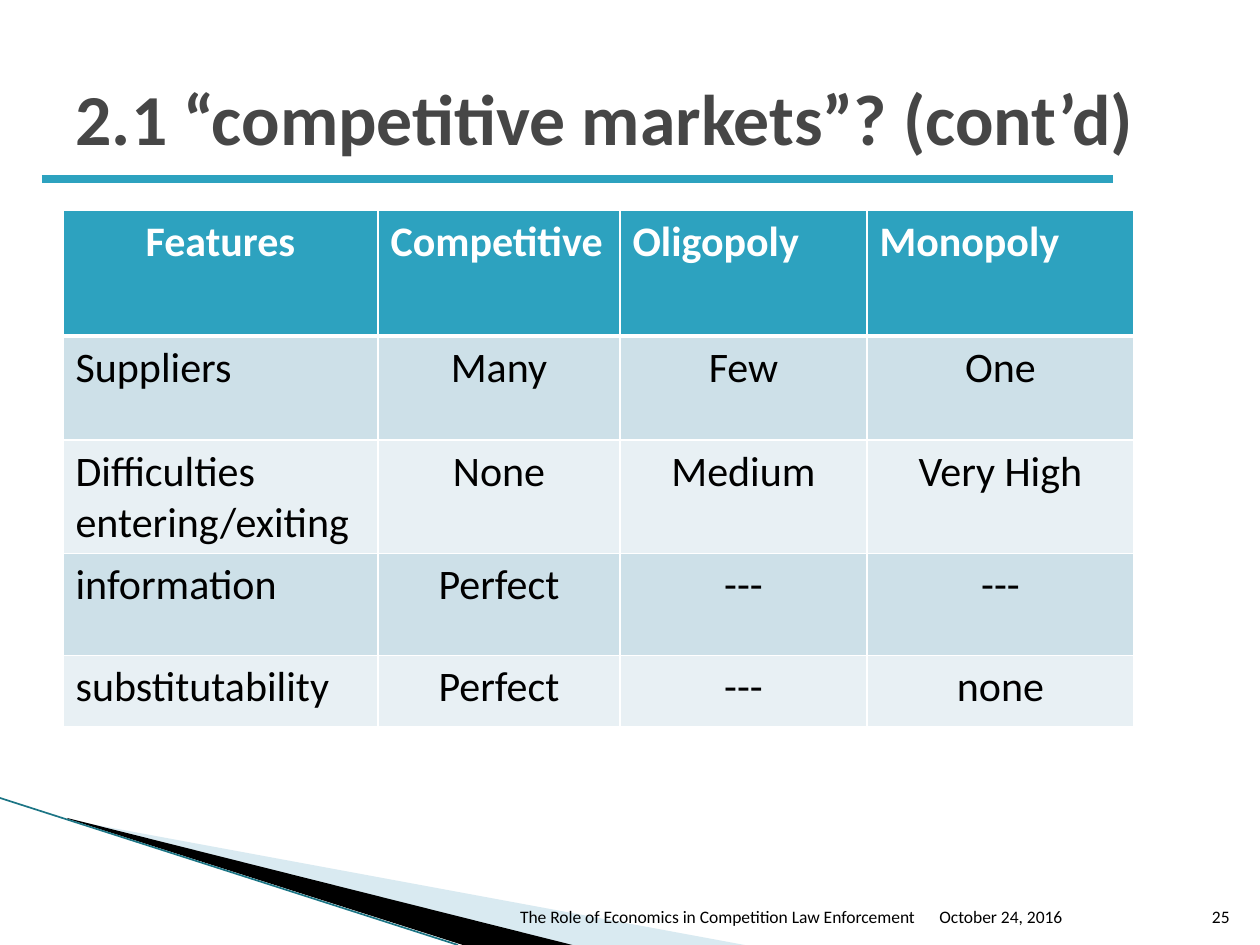
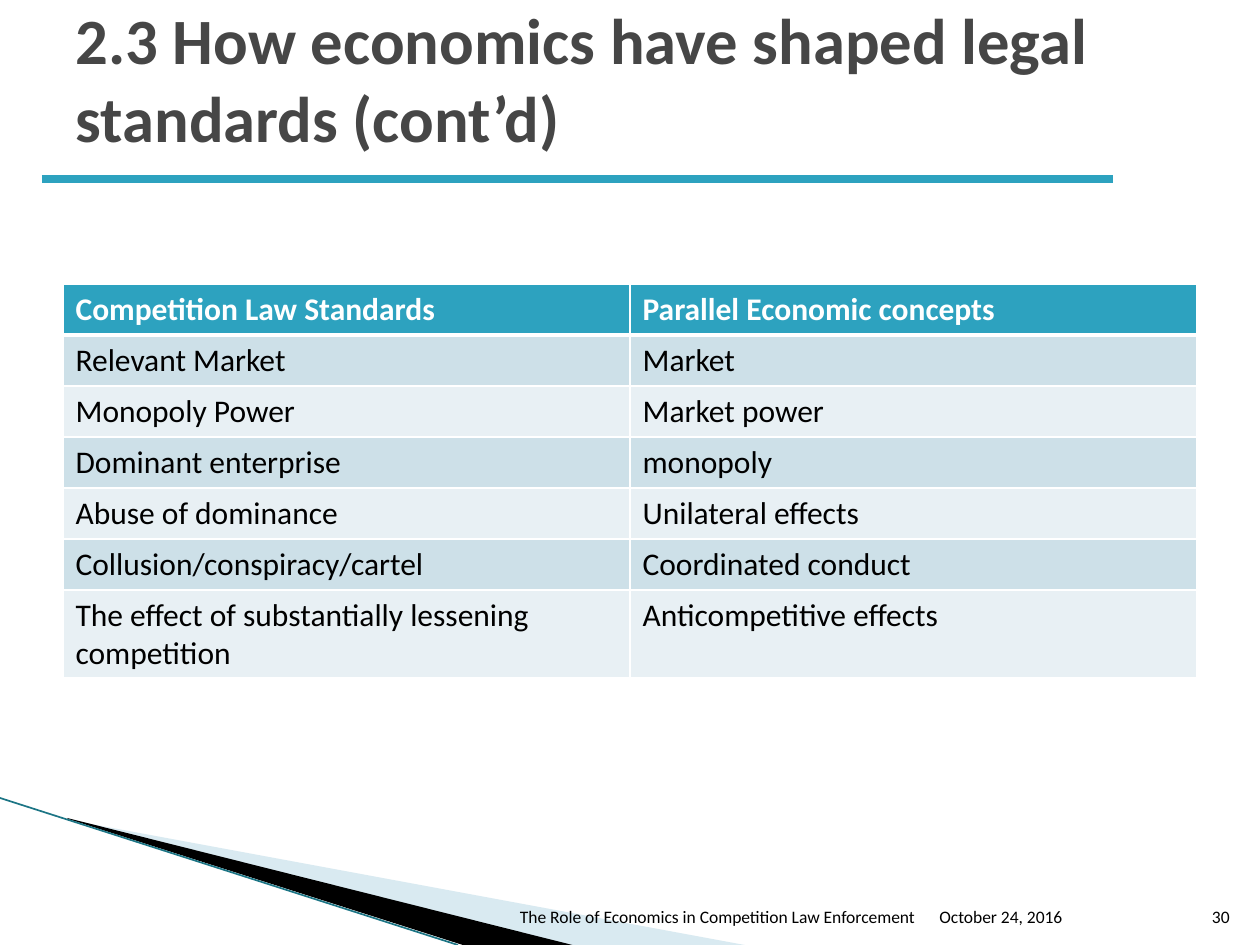
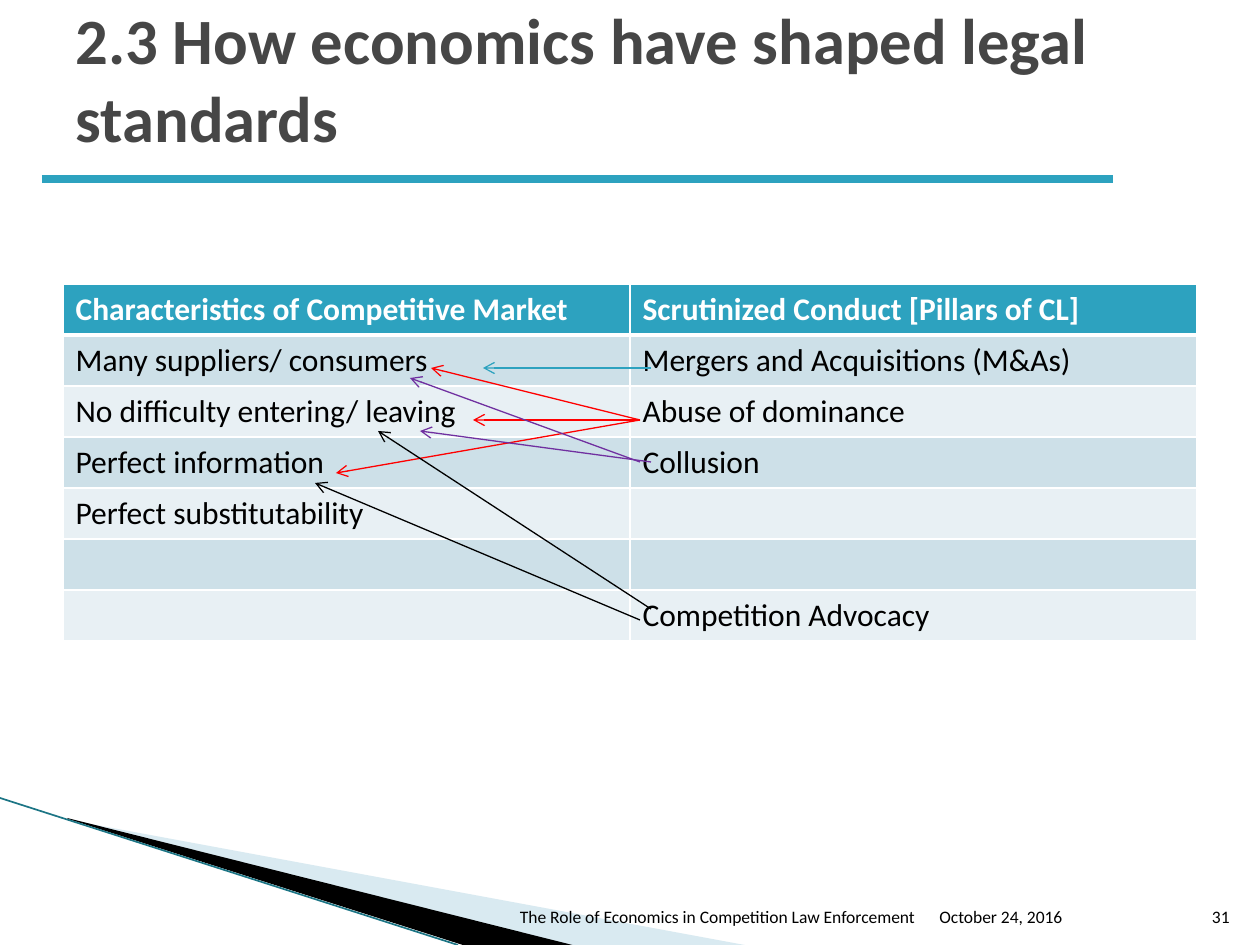
from lxml import etree
from pptx import Presentation
from pptx.dml.color import RGBColor
from pptx.enum.shapes import MSO_CONNECTOR
from pptx.enum.text import MSO_ANCHOR, MSO_AUTO_SIZE, PP_ALIGN
from pptx.oxml.ns import qn
from pptx.util import Pt

# Lengths are whole px, 126 to the inch
PX = 914400 / 126
SLIDE_W, SLIDE_H = 1260, 945

STRAIGHT = MSO_CONNECTOR.STRAIGHT
LEFT, CENTER, RIGHT = PP_ALIGN.LEFT, PP_ALIGN.CENTER, PP_ALIGN.RIGHT
MIDDLE, BOTTOM = MSO_ANCHOR.MIDDLE, MSO_ANCHOR.BOTTOM
NO_AUTOFIT = MSO_AUTO_SIZE.NONE

FONT = "Calibri"
WHITE = RGBColor(0xFF, 0xFF, 0xFF)
BLACK = RGBColor(0x00, 0x00, 0x00)
TITLE_GREY = RGBColor(0x46, 0x46, 0x46)
TEAL = RGBColor(0x2D, 0xA2, 0xBF)
DARK_TEAL = RGBColor(0x1C, 0x75, 0x85)
PALE_BLUE = RGBColor(0xA0, 0xCB, 0xDC)
BAND_DARK = RGBColor(0xCD, 0xE0, 0xE8)
BAND_LIGHT = RGBColor(0xE8, 0xF0, 0xF4)
RED = RGBColor(0xFF, 0x00, 0x00)
PURPLE = RGBColor(0x70, 0x30, 0xA0)

TITLE_BOX = (63, 38, 1134, 157)
FOOTER_TOP, FOOTER_H = 883, 50
LECTURE = "The Role of Economics in Competition Law Enforcement"
LECTURE_DATE = "October 24, 2016"

MARKET_TABLE_BOX = (63, 210)
MARKET_COLUMNS = [315, 242, 247, 267]
MARKET_ROWS = [126, 104, 93, 102, 71]
MARKET_FEATURES = [
    ["Features", "Competitive", "Oligopoly", "Monopoly"],
    ["Suppliers", "Many", "Few", "One"],
    ["Difficulties entering/exiting", "None", "Medium", "Very High"],
    ["information", "Perfect", "---", "---"],
    ["substitutability", "Perfect", "---", "none"],
]

PAIR_TABLE_BOX = (63, 284)
PAIR_COLUMNS = [567, 567]
PAIR_ROW_H = 51
LEGAL_STANDARDS = [
    ["Competition Law Standards", "Parallel Economic concepts"],
    ["Relevant Market", "Market"],
    ["Monopoly Power", "Market power"],
    ["Dominant enterprise", "monopoly"],
    ["Abuse of dominance", "Unilateral effects"],
    ["Collusion/conspiracy/cartel", "Coordinated conduct"],
    ["The effect of substantially lessening competition", "Anticompetitive effects"],
]
SCRUTINIZED_CONDUCT = [
    ["Characteristics of Competitive Market", "Scrutinized Conduct [Pillars of CL]"],
    ["Many suppliers/ consumers", "Mergers and Acquisitions (M&As)"],
    ["No difficulty entering/ leaving", "Abuse of dominance"],
    ["Perfect information", "Collusion"],
    ["Perfect substitutability", ""],
    ["", ""],
    ["", "Competition Advocacy"],
]
# Conduct point, market characteristic point (from the table corner), colour
CONDUCT_ARROWS = [
    ((588, 84), (420, 84), TEAL),
    ((577, 136), (410, 136), RED),
    ((577, 136), (273, 189), RED),
    ((577, 136), (368, 84), RED),
    ((577, 178), (347, 94), PURPLE),
    ((588, 178), (357, 147), PURPLE),
    ((577, 336), (252, 199), BLACK),
    ((588, 325), (315, 147), BLACK),
]


def px(length):
    return round(length * PX)


def write_text(frame, text, size=10, color=BLACK, bold=False, align=LEFT):
    paragraph = frame.paragraphs[0]
    paragraph.alignment = align
    if text:
        run = paragraph.add_run()
        run.text = text
        run.font.name = FONT
        run.font.size = Pt(size)
        run.font.bold = bold
        run.font.color.rgb = color


def add_line(slide, start, end, color, width, arrow=False):
    line = slide.shapes.add_connector(STRAIGHT, *map(px, start + end))
    line.line.color.rgb = color
    line.line.width = Pt(width)
    if arrow:
        etree.SubElement(line.line._get_or_add_ln(), qn("a:tailEnd"), type="arrow")
    etree.SubElement(line._element.spPr, qn("a:effectLst"))


def add_wedge(slide, points, color, opacity=100):
    outline = slide.shapes.build_freeform(*points[0], scale=PX)
    outline.add_line_segments(points[1:], close=True)
    wedge = outline.convert_to_shape()
    wedge.shadow.inherit = False
    wedge.line.fill.background()
    wedge.fill.solid()
    wedge.fill.fore_color.rgb = color
    if opacity < 100:
        fill_color = wedge._element.spPr.find(".//" + qn("a:srgbClr"))
        etree.SubElement(fill_color, qn("a:alpha"), val=str(opacity * 1000))


def add_corner_sweep(slide):
    add_wedge(slide, [(69, 820), (750, 946), (575, 946), (69, 819)], PALE_BLUE, opacity=40)
    add_wedge(slide, [(67, 818), (576, 946), (469, 947), (68, 819)], BLACK)
    add_line(slide, (0, 798), (458, 945), DARK_TEAL, 0.95)


def add_footer(slide, number, lecture_left):
    parts = [
        (lecture_left, 927, LECTURE, RIGHT),
        (927, 1192, LECTURE_DATE, LEFT),
        (1192, 1242, str(number), RIGHT),
    ]
    for left, right, text, align in parts:
        box = slide.shapes.add_textbox(
            px(left), px(FOOTER_TOP), px(right - left), px(FOOTER_H))
        box.text_frame.word_wrap = True
        box.text_frame.vertical_anchor = BOTTOM
        write_text(box.text_frame, text, align=align)


def set_title(slide, text, size, space_below):
    title = slide.shapes.title
    title.left, title.top, title.width, title.height = map(px, TITLE_BOX)
    frame = title.text_frame
    frame.word_wrap = True
    frame.auto_size = NO_AUTOFIT
    frame.vertical_anchor = MIDDLE
    frame.margin_bottom = px(space_below)
    write_text(frame, text, size=size, color=TITLE_GREY, bold=True)


def start_slide(deck, title, number, size=36.9, space_below=84, lecture_left=483):
    slide = deck.slides.add_slide(deck.slide_layouts[5])
    add_corner_sweep(slide)
    set_title(slide, title, size, space_below)
    add_line(slide, (42, 179), (1113, 179), TEAL, 5)
    add_footer(slide, number, lecture_left)
    return slide


def set_borders(cell, top, bottom):
    properties = cell._tc.get_or_add_tcPr()
    for side, width in (("L", 1), ("R", 1), ("T", top), ("B", bottom)):
        border = etree.SubElement(properties, qn("a:ln" + side), w=str(Pt(width)))
        fill = etree.SubElement(border, qn("a:solidFill"))
        etree.SubElement(fill, qn("a:srgbClr"), val=str(WHITE))


def add_banded_table(slide, box, columns, heights, rows, size, center_values=False):
    left, top = box
    table = slide.shapes.add_table(
        len(rows), len(columns), px(left), px(top), px(sum(columns)), px(sum(heights))).table
    for column, width in zip(table.columns, columns):
        column.width = px(width)
    for r, (texts, height) in enumerate(zip(rows, heights)):
        table.rows[r].height = px(height)
        header = r == 0
        band = TEAL if header else BAND_DARK if r % 2 else BAND_LIGHT
        for c, text in enumerate(texts):
            cell = table.cell(r, c)
            set_borders(cell, top=3 if r == 1 else 1, bottom=3 if header else 1)
            cell.fill.solid()
            cell.fill.fore_color.rgb = band
            # The first heading and the values are centred
            centered = center_values and header == (c == 0)
            write_text(cell.text_frame, text, size=size, bold=header,
                       color=WHITE if header else BLACK,
                       align=CENTER if centered else LEFT)


def add_pair_table(slide, rows):
    add_banded_table(slide, PAIR_TABLE_BOX, PAIR_COLUMNS, [PAIR_ROW_H] * len(rows), rows, 18)


def add_conduct_arrows(slide, box):
    left, top = box
    for (x1, y1), (x2, y2), color in CONDUCT_ARROWS:
        add_line(slide, (left + x1, top + y1), (left + x2, top + y2), color, 0.75, arrow=True)


def main():
    deck = Presentation()
    deck.slide_width, deck.slide_height = px(SLIDE_W), px(SLIDE_H)

    # Market types compared
    markets = start_slide(deck, "2.1 “competitive markets”? (cont’d)", 25,
                          size=41, space_below=6, lecture_left=494)
    add_banded_table(markets, MARKET_TABLE_BOX, MARKET_COLUMNS, MARKET_ROWS,
                     MARKET_FEATURES, 24, center_values=True)

    # Legal standards and economic concepts
    standards = start_slide(
        deck, "2.3 How economics have shaped legal standards (cont’d)", 30)
    add_pair_table(standards, LEGAL_STANDARDS)

    # Conduct linked to market characteristics
    conduct = start_slide(deck, "2.3 How economics have shaped legal standards", 31)
    add_pair_table(conduct, SCRUTINIZED_CONDUCT)
    add_conduct_arrows(conduct, PAIR_TABLE_BOX)

    deck.save("out.pptx")


if __name__ == "__main__":
    main()
